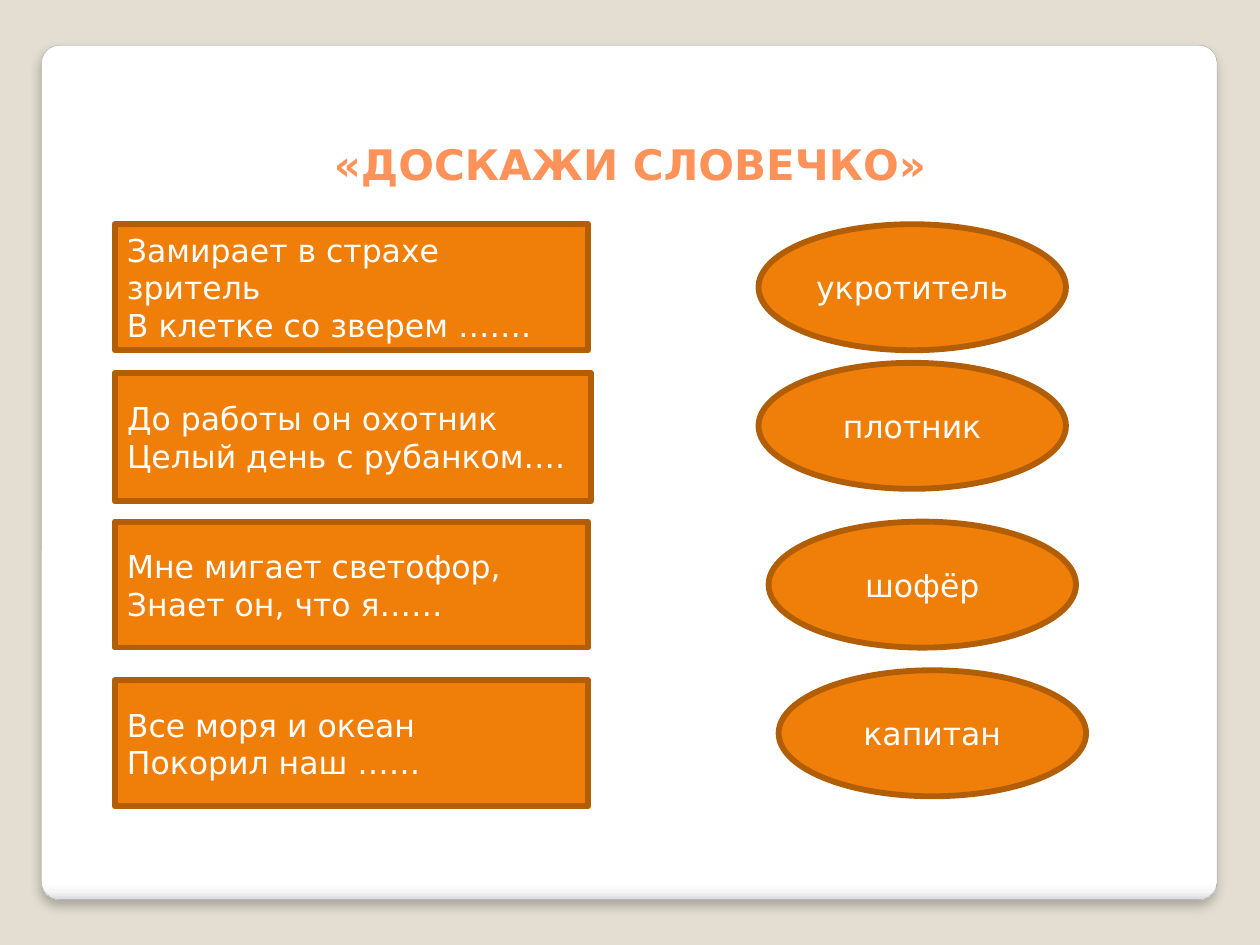
from dataclasses import dataclass

from lxml import etree
from pptx import Presentation
from pptx import util as u
from pptx.dml.color import RGBColor
from pptx.enum import shapes, text
from pptx.oxml import ns


@dataclass(frozen=True)
class Theme:
    """Colours, font and sizes of the slide."""
    font: str = "DejaVu Sans"
    background: str = "E3DED1"
    panel_edge: str = "A4A4A4"
    panel_stops: tuple = ((0, "FFFFFF"), (98, "FFFFFF"), (99, "F7F7F7"), (100, "DADADA"))
    shadow: str = "000000"
    title: str = "FF9258"
    card: str = "F07F09"
    card_edge: str = "B25E07"
    card_text: str = "FFFFFF"
    title_size: int = 24
    card_size: int = 18
    edge_width: float = 3.35


THEME = Theme()
RIDDLES = (
    (1.78, 3.76, 1, ("Замирает в страхе зритель", "В клетке со зверем …….")),
    (2.96, 3.78, 1.02, ("До работы он охотник", "Целый день с рубанком….")),
    (4.14, 3.76, 1, ("Мне мигает светофор,", "Знает он, что я……")),
    (5.4, 3.76, 1, ("Все моря и океан", "Покорил наш ……")),
)
ANSWERS = (
    (6.02, 1.78, "укротитель"),
    (6.02, 2.88, "плотник"),
    (6.1, 4.14, "шофёр"),
    (6.18, 5.32, "капитан"),
)


def rgb(value):
    """Turn a hex string into a colour."""
    return RGBColor.from_string(value)


def add_child(parent, tag, **attributes):
    """Append a DrawingML element with the given attributes."""
    child = etree.SubElement(parent, ns.qn(tag))
    for key, value in attributes.items():
        child.set(key, str(value))
    return child


def write_lines(frame, lines, size, colour, align, bold=False):
    """Write each line as a paragraph of one run."""
    frame.word_wrap = True
    for index, line in enumerate(lines):
        paragraph = frame.paragraphs[0] if index == 0 else frame.add_paragraph()
        paragraph.alignment = align
        run = paragraph.add_run()
        run.text = line
        run.font.name = THEME.font
        run.font.size = u.Pt(size)
        run.font.bold = bold
        run.font.color.rgb = rgb(colour)


def add_panel(slide):
    """Add the white rounded panel with its shaded foot and soft shadow."""
    panel = slide.shapes.add_shape(
        shapes.MSO_SHAPE.ROUNDED_RECTANGLE,
        u.Inches(0.33), u.Inches(0.36), u.Inches(9.33), u.Inches(6.78))
    panel.adjustments[0] = 0.021
    panel.line.color.rgb = rgb(THEME.panel_edge)
    panel.line.width = u.Pt(0.16)
    panel.fill.gradient()
    panel.fill.gradient_angle = 270
    properties = panel.fill._xPr
    stops = properties.find(ns.qn("a:gradFill")).find(ns.qn("a:gsLst"))
    for stop in list(stops):
        stops.remove(stop)
    for position, colour in THEME.panel_stops:
        stop = add_child(stops, "a:gs", pos=position * 1000)
        add_child(stop, "a:srgbClr", val=colour)
    effects = add_child(properties, "a:effectLst")
    shadow = add_child(effects, "a:outerShdw", blurRad=u.Pt(6), dist=u.Pt(4),
                       dir=5400000, algn="t", rotWithShape=0)
    add_child(add_child(shadow, "a:srgbClr", val=THEME.shadow), "a:alpha", val=25000)


def add_title(slide, heading):
    """Add the centred heading."""
    title = slide.shapes.add_textbox(
        u.Inches(0.5), u.Inches(0.3), u.Inches(9), u.Inches(1.25))
    title.text_frame.vertical_anchor = text.MSO_ANCHOR.BOTTOM
    write_lines(title.text_frame, [heading], THEME.title_size, THEME.title,
                text.PP_ALIGN.CENTER, bold=True)


def add_card(slide, outline, left, top, width, height, lines, align):
    """Add an orange card with text in the middle."""
    card = slide.shapes.add_shape(
        outline, u.Inches(left), u.Inches(top), u.Inches(width), u.Inches(height))
    card.shadow.inherit = False
    card.fill.solid()
    card.fill.fore_color.rgb = rgb(THEME.card)
    card.line.color.rgb = rgb(THEME.card_edge)
    card.line.width = u.Pt(THEME.edge_width)
    card.text_frame.vertical_anchor = text.MSO_ANCHOR.MIDDLE
    write_lines(card.text_frame, lines, THEME.card_size, THEME.card_text, align)


def main():
    """Build the slide and save it."""
    deck = Presentation()
    deck.slide_width, deck.slide_height = u.Inches(10), u.Inches(7.5)
    slide = deck.slides.add_slide(deck.slide_layouts[6])
    slide.background.fill.solid()
    slide.background.fill.fore_color.rgb = rgb(THEME.background)
    add_panel(slide)
    add_title(slide, "«ДОСКАЖИ СЛОВЕЧКО»")
    for top, width, height, lines in RIDDLES:
        add_card(slide, shapes.MSO_SHAPE.RECTANGLE, 0.91, top, width, height,
                 lines, text.PP_ALIGN.LEFT)
    for left, top, answer in ANSWERS:
        add_card(slide, shapes.MSO_SHAPE.OVAL, left, top, 2.44, 1,
                 [answer], text.PP_ALIGN.CENTER)
    deck.save("out.pptx")


if __name__ == "__main__":
    main()
